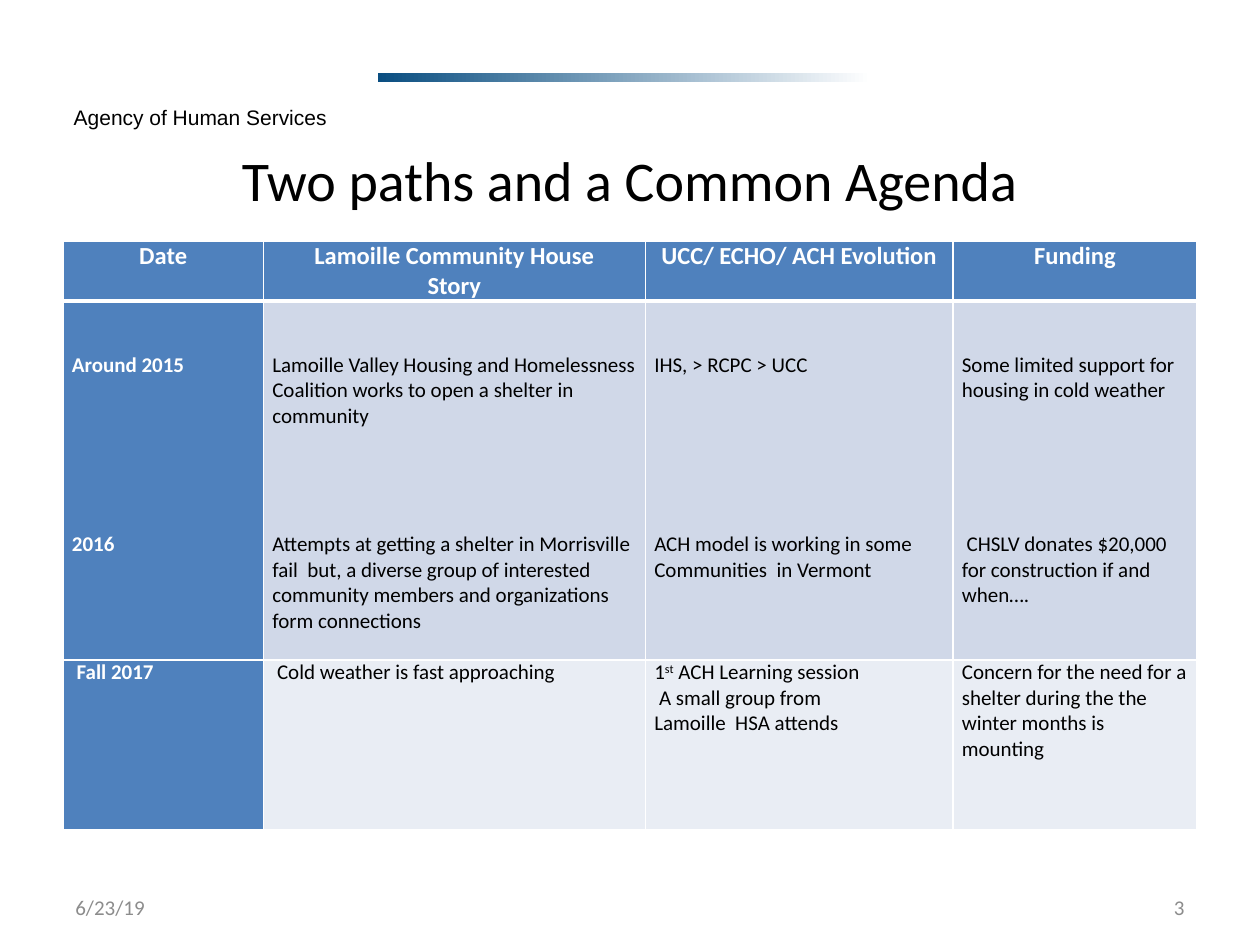
"""Build the slide that compares two paths towards a common agenda."""
from lxml import etree
from pptx import Presentation
from pptx.dml.color import RGBColor
from pptx.enum.shapes import MSO_SHAPE
from pptx.enum.text import MSO_ANCHOR, PP_ALIGN
from pptx.oxml.ns import qn
from pptx.util import Cm, Pt

LEFT, CENTER, RIGHT = PP_ALIGN.LEFT, PP_ALIGN.CENTER, PP_ALIGN.RIGHT
TOP, MIDDLE = MSO_ANCHOR.TOP, MSO_ANCHOR.MIDDLE
RECTANGLE = MSO_SHAPE.RECTANGLE

BLUE, PALE, PALER = "4F81BD", "D0D8E8", "E9EDF4"
WHITE, BLACK, GREY, NAVY = "FFFFFF", "000000", "8C8C8C", "0A4E81"
LINE = 14.65
LINES_BETWEEN_STARTS = 7

HEADINGS = [
    ["Date"],
    ["Lamoille Community House", "Story"],
    ["UCC/ ECHO/ ACH Evolution"],
    ["Funding"],
]
EARLY_YEARS = [
    (["Around 2015", "2016"], 1),
    (["Lamoille Valley Housing and Homelessness Coalition works to open a shelter in community",
      "Attempts at getting a shelter in Morrisville fail  but, a diverse group of interested "
      "community members and organizations form connections"], 3),
    (["IHS, > RCPC > UCC", "ACH model is working in some Communities  in Vermont"], 1),
    (["Some limited support for housing in cold weather",
      " CHSLV donates $20,000 for construction if and when…."], 2),
]
FALL_2017 = [
    [" Fall 2017"],
    [" Cold weather is fast approaching"],
    ["1^st^ ACH Learning session", " A small group from", "Lamoille  HSA attends"],
    ["Concern for the need for a shelter during the the winter months is mounting"],
]


def color(value):
    """Turn a hex string into a colour."""
    return RGBColor.from_string(value)


def write_text(frame, paragraphs, size=12, ink=BLACK, bold=False, font="Calibri",
               align=LEFT, gap=0):
    """Fill a text frame, raising the parts between carets to superscript."""
    for index, text in enumerate(paragraphs):
        paragraph = frame.add_paragraph() if index else frame.paragraphs[0]
        paragraph.alignment = align
        paragraph.space_before = Pt(gap if index else 0)
        for part, piece in enumerate(text.split("^")):
            run = paragraph.add_run()
            run.text = piece
            run.font.name, run.font.size, run.font.bold = font, Pt(size), bold
            run.font.color.rgb = color(ink)
            if part % 2:
                run.font._element.set("baseline", "30000")


def set_borders(cell, top=1, bottom=1):
    """Draw white borders of the given widths around a cell."""
    properties = cell._tc.get_or_add_tcPr()
    for side, width in (("L", 1), ("R", 1), ("T", top), ("B", bottom)):
        border = etree.SubElement(properties, qn(f"a:ln{side}"), w=str(Pt(width)))
        fill = etree.SubElement(border, qn("a:solidFill"))
        etree.SubElement(fill, qn("a:srgbClr"), val=WHITE)


class SlideBuilder:
    """Hold the current slide and add styled elements to it."""

    def __init__(self, slide):
        """Keep the slide to draw on."""
        self.slide = slide

    def bar(self, left, top, width, height):
        """Add the bar that fades from navy to white."""
        shape = self.slide.shapes.add_shape(RECTANGLE, Cm(left), Cm(top), Cm(width), Cm(height))
        shape.shadow.inherit = False
        shape.line.fill.background()
        shape.fill.gradient()
        shape.fill.gradient_angle = 0
        for stop, value in zip(shape.fill.gradient_stops, (NAVY, WHITE)):
            stop.color.rgb = color(value)

    def title(self, text, left, top, width, height):
        """Place the title placeholder."""
        shape = self.slide.shapes.title
        shape.left, shape.top, shape.width, shape.height = map(Cm, (left, top, width, height))
        shape.text_frame.vertical_anchor = MIDDLE
        write_text(shape.text_frame, [text], size=32, align=CENTER)

    def label(self, text, left, top, width, height, anchor=MIDDLE, **style):
        """Add a small text box."""
        box = self.slide.shapes.add_textbox(Cm(left), Cm(top), Cm(width), Cm(height))
        box.text_frame.word_wrap = True
        box.text_frame.vertical_anchor = anchor
        write_text(box.text_frame, [text], **style)

    def table(self, left, top, widths, heights):
        """Add an empty table and return it."""
        frame = self.slide.shapes.add_table(len(heights), len(widths), Cm(left), Cm(top),
                                            Cm(sum(widths)), Cm(sum(heights)))
        for column, width in zip(frame.table.columns, widths):
            column.width = Cm(width)
        for row, height in zip(frame.table.rows, heights):
            row.height = Cm(height)
        return frame.table

    def cell(self, cell, paragraphs, fill, top=1, bottom=1, blank_lines=0, **style):
        """Fill one table cell."""
        cell.margin_left = cell.margin_right = Cm(0.18)
        cell.margin_top, cell.margin_bottom = Pt(blank_lines * LINE), 0
        set_borders(cell, top, bottom)
        cell.fill.solid()
        cell.fill.fore_color.rgb = color(fill)
        write_text(cell.text_frame, paragraphs, **style)


def main():
    """Build and save the presentation."""
    presentation = Presentation()
    presentation.slide_width, presentation.slide_height = Cm(25.4), Cm(19.05)
    builder = SlideBuilder(presentation.slides.add_slide(presentation.slide_layouts[5]))

    builder.bar(7.62, 1.48, 9.95, 0.18)
    builder.label("Agency of Human Services", 0.46, 1.98, 7.16, 0.76,
                  anchor=TOP, font="Arial", align=CENTER)
    builder.label("3", 18.2, 17.78, 5.93, 1.01, ink=GREY, align=RIGHT)
    builder.label("6/23/19", 1.27, 17.78, 5.93, 1.01, ink=GREY)
    builder.title("Two paths and a Common Agenda", 1.27, 2.34, 22.86, 2.54)

    table = builder.table(1.27, 4.87, [4.04, 7.7, 6.2, 4.92], [1.2, 7.23, 3.43])
    for column, heading in enumerate(HEADINGS):
        builder.cell(table.cell(0, column), heading, BLUE, bottom=3,
                     size=14, ink=WHITE, bold=True, align=CENTER)
        is_date = column == 0
        style = {"ink": WHITE if is_date else BLACK, "bold": is_date}
        events, first_lines = EARLY_YEARS[column]
        builder.cell(table.cell(1, column), events, BLUE if is_date else PALE, top=3,
                     blank_lines=2, gap=LINE * (LINES_BETWEEN_STARTS - first_lines), **style)
        builder.cell(table.cell(2, column), FALL_2017[column],
                     BLUE if is_date else PALER, **style)

    presentation.save("out.pptx")


if __name__ == "__main__":
    main()
